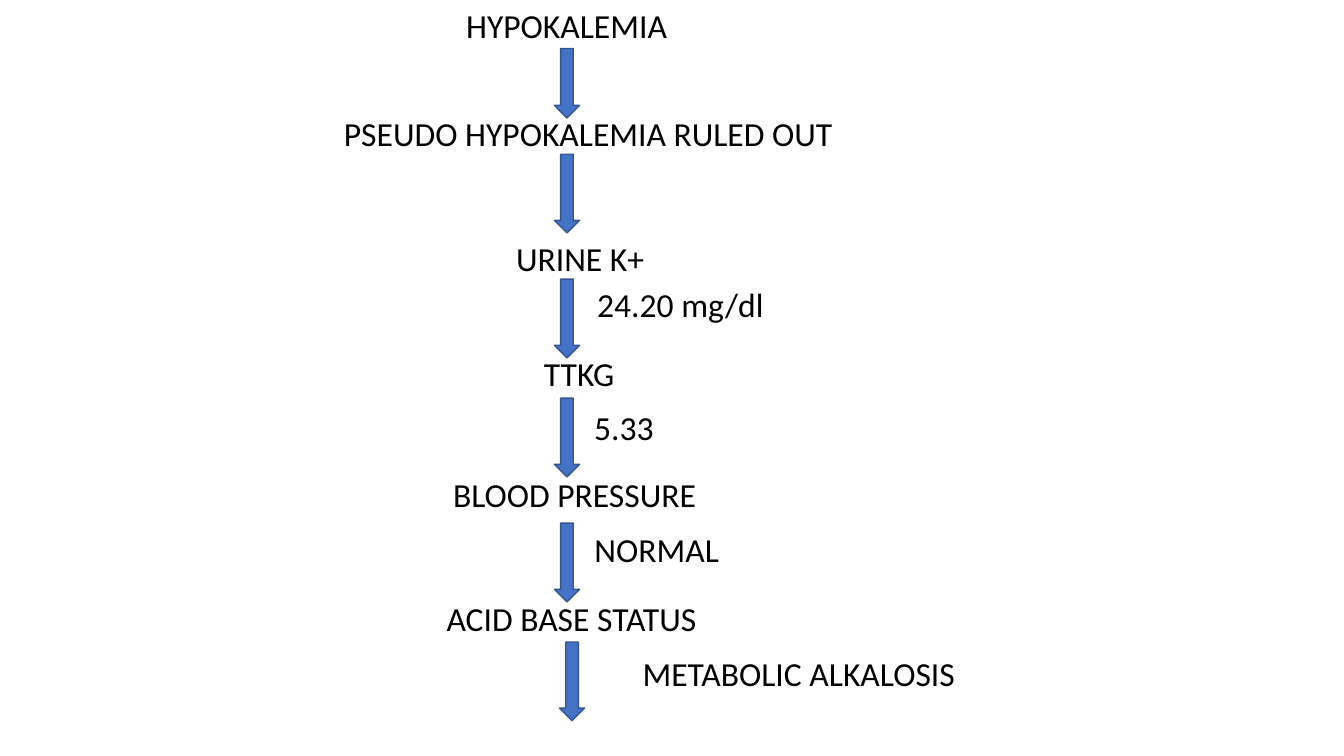
"""Build the hypokalemia work-up flow slide."""
from pptx import Presentation
from pptx.dml.color import RGBColor
from pptx.enum.shapes import MSO_SHAPE
from pptx.enum.text import MSO_ANCHOR, MSO_AUTO_SIZE, PP_ALIGN
from pptx.util import Pt

BLACK = RGBColor(0x00, 0x00, 0x00)
BLUE = RGBColor(0x44, 0x72, 0xC4)
NAVY = RGBColor(0x32, 0x54, 0x91)

TITLE = ("HYPOKALEMIA", 324.7, 0, 160)
STEPS = [
    ("PSEUDO HYPOKALEMIA RULED OUT", 236.9, 77, 366.5),
    ("URINE K+", 360.7, 166.3, 107.3),
    ("TTKG", 380.9, 248.4, 65.5),
    ("BLOOD PRESSURE", 315.4, 334.8, 190),
    ("ACID BASE STATUS", 311, 423.4, 194.4),
]
RESULTS = [
    ("24.20 mg/dl", 419, 199.4, 134),
    ("5.33", 416.9, 287.3, 57.6),
    ("NORMAL", 416.9, 374.4, 104.4),
    ("METABOLIC ALKALOSIS", 450.7, 463, 239.8),
]
ARROWS = [
    (396, 34.6, 49.7),
    (396, 110.2, 56.2),
    (396, 199.4, 56.2),
    (396, 284.4, 56.2),
    (396, 373.7, 56.2),
    (399.6, 458.6, 56.2),
]
ROW = 36
WIDE = 18


def write(shape, text):
    """Fill a shape with one centred line of text."""
    frame = shape.text_frame
    frame.word_wrap = False
    frame.auto_size = MSO_AUTO_SIZE.SHAPE_TO_FIT_TEXT
    frame.vertical_anchor = MSO_ANCHOR.TOP
    line = frame.paragraphs[0]
    line.alignment = PP_ALIGN.CENTER
    line.line_spacing = 1.0
    line.space_before = Pt(0)
    run = line.add_run()
    run.text = text
    run.font.name = "Calibri"
    run.font.size = Pt(24)
    run.font.color.rgb = BLACK


def point(slide, left, top, tall):
    """Draw one down arrow."""
    arrow = slide.shapes.add_shape(
        MSO_SHAPE.DOWN_ARROW, Pt(left), Pt(top), Pt(WIDE), Pt(tall))
    arrow.shadow.inherit = False
    arrow.fill.solid()
    arrow.fill.fore_color.rgb = BLUE
    arrow.line.color.rgb = NAVY
    arrow.line.width = Pt(1)


def main():
    """Lay out the slide and save it."""
    deck = Presentation()
    deck.slide_width, deck.slide_height = Pt(960), Pt(540)
    slide = deck.slides.add_slide(deck.slide_layouts[5])
    text, left, top, width = TITLE
    title = slide.shapes.title
    title.left, title.top = Pt(left), Pt(top)
    title.width, title.height = Pt(width), Pt(ROW)
    write(title, text)
    for arrow in ARROWS:
        point(slide, *arrow)
    for text, left, top, width in STEPS + RESULTS:
        box = slide.shapes.add_textbox(Pt(left), Pt(top), Pt(width), Pt(ROW))
        write(box, text)
    deck.save("out.pptx")


if __name__ == "__main__":
    main()
